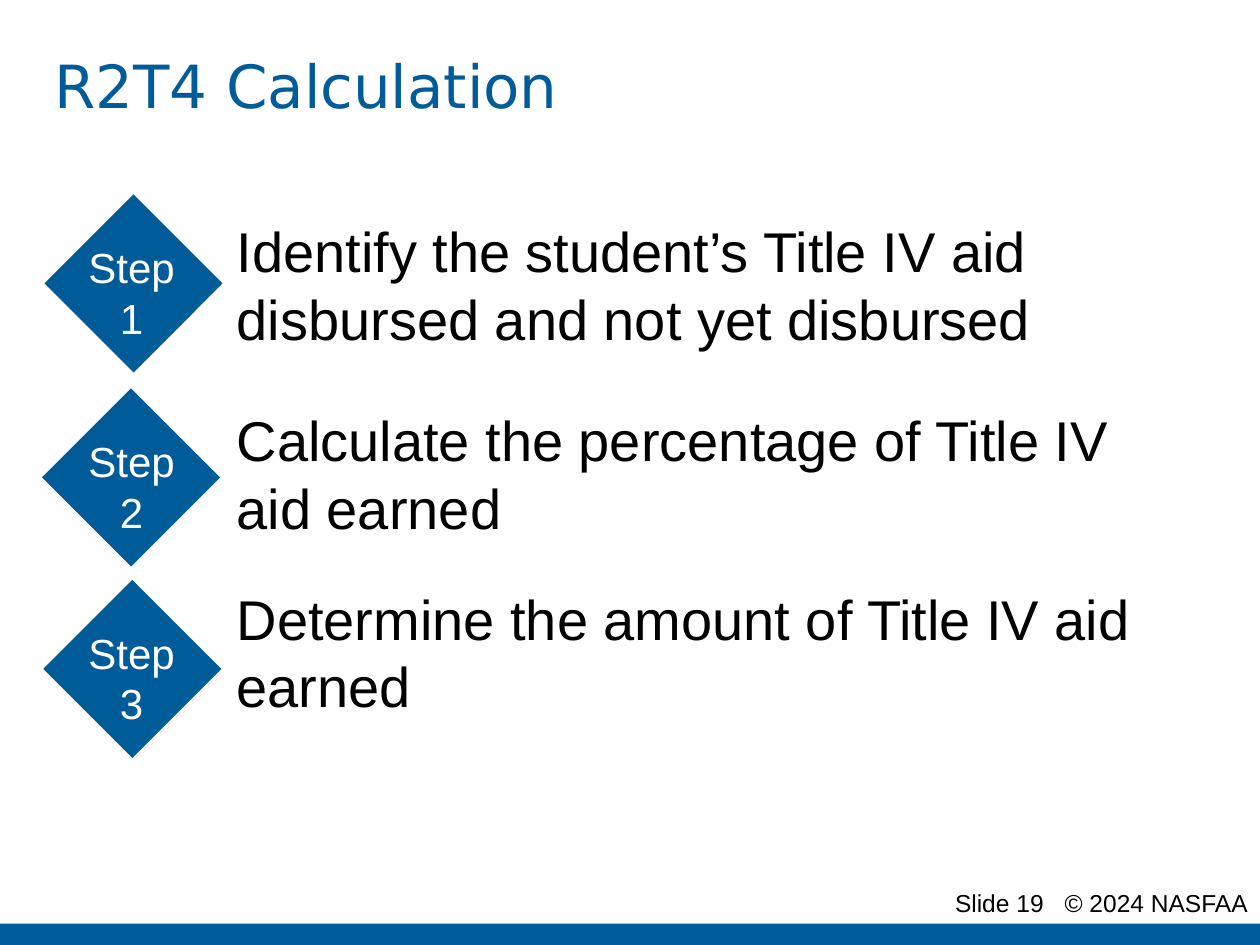
from pptx import Presentation
from pptx.dml.color import RGBColor
from pptx.enum.shapes import MSO_SHAPE
from pptx.enum.text import MSO_ANCHOR, PP_ALIGN
from pptx.oxml import parse_xml
from pptx.oxml.ns import nsdecls
from pptx.util import Inches, Pt

BLUE = "005B99"


def paint(fill, color):
    fill.solid()
    fill.fore_color.rgb = RGBColor.from_string(color)


def write(frame, text, size, color="000000", font="Arial", align=PP_ALIGN.LEFT,
          line=None, gaps=(0,), tab=None):
    """Write one paragraph per line of text, each with its gap above."""
    frame.word_wrap = True
    for i, (part, gap) in enumerate(zip(text.split("\n"), gaps)):
        para = frame.paragraphs[0] if i == 0 else frame.add_paragraph()
        para.text = part
        para.alignment = align
        para.space_before = Pt(gap)
        if line:
            para.line_spacing = Pt(line)
        if tab:
            para._p.get_or_add_pPr().append(parse_xml(
                f'<a:tabLst {nsdecls("a")}><a:tab pos="{Inches(tab)}" algn="l"/></a:tabLst>'))
        para.font.size = Pt(size)
        para.font.name = font
        paint(para.font.fill, color)


deck = Presentation()
deck.slide_width, deck.slide_height = Inches(10), Inches(7.5)
slide = deck.slides.add_slide(deck.slide_layouts[5])
shapes = slide.shapes

# Footer bar and line
bar = shapes.add_shape(MSO_SHAPE.RECTANGLE, 0, Inches(7.33), Inches(10), Inches(0.2))
bar.shadow.inherit = False
paint(bar.fill, BLUE)
bar.line.fill.background()

foot = shapes.add_textbox(Inches(7), Inches(7), Inches(3), Inches(0.25)).text_frame
foot.margin_left, foot.margin_right = Inches(0.58), 0
write(foot, "Slide 19\t© 2024 NASFAA", 14, tab=0.87)

# Title
title = shapes.title
title.left, title.top = Inches(0.33), Inches(0.17)
title.width, title.height = Inches(9.3), Inches(1)
title.text_frame.vertical_anchor = MSO_ANCHOR.MIDDLE
write(title.text_frame, "R2T4 Calculation", 34, BLUE, font="DejaVu Sans")

# Step descriptions
body = shapes.add_textbox(Inches(1.78), Inches(1.67), Inches(7.8), Inches(5.08))
write(body.text_frame,
      "Identify the student’s Title IV aid disbursed and not yet disbursed\n"
      "Calculate the percentage of Title IV aid earned\n"
      "Determine the amount of Title IV aid earned",
      32, line=38.5, gaps=(0, 31, 25))

# Step diamonds with their labels
for num, (left, top) in enumerate([(0.56, 1.75), (0.54, 3.29), (0.55, 4.81)], 1):
    group = shapes.add_group_shape().shapes
    mark = group.add_shape(MSO_SHAPE.RECTANGLE, Inches(left), Inches(top),
                           Inches(1), Inches(1))
    mark.rotation = 45
    mark.shadow.inherit = False
    paint(mark.fill, BLUE)
    mark.line.fill.background()
    label = group.add_textbox(Inches(0.52), Inches(top + 0.12), Inches(1.05), Inches(0.91))
    write(label.text_frame, f"Step {num}", 24, "FFFFFF", align=PP_ALIGN.CENTER, line=28.8)

deck.save("out.pptx")
